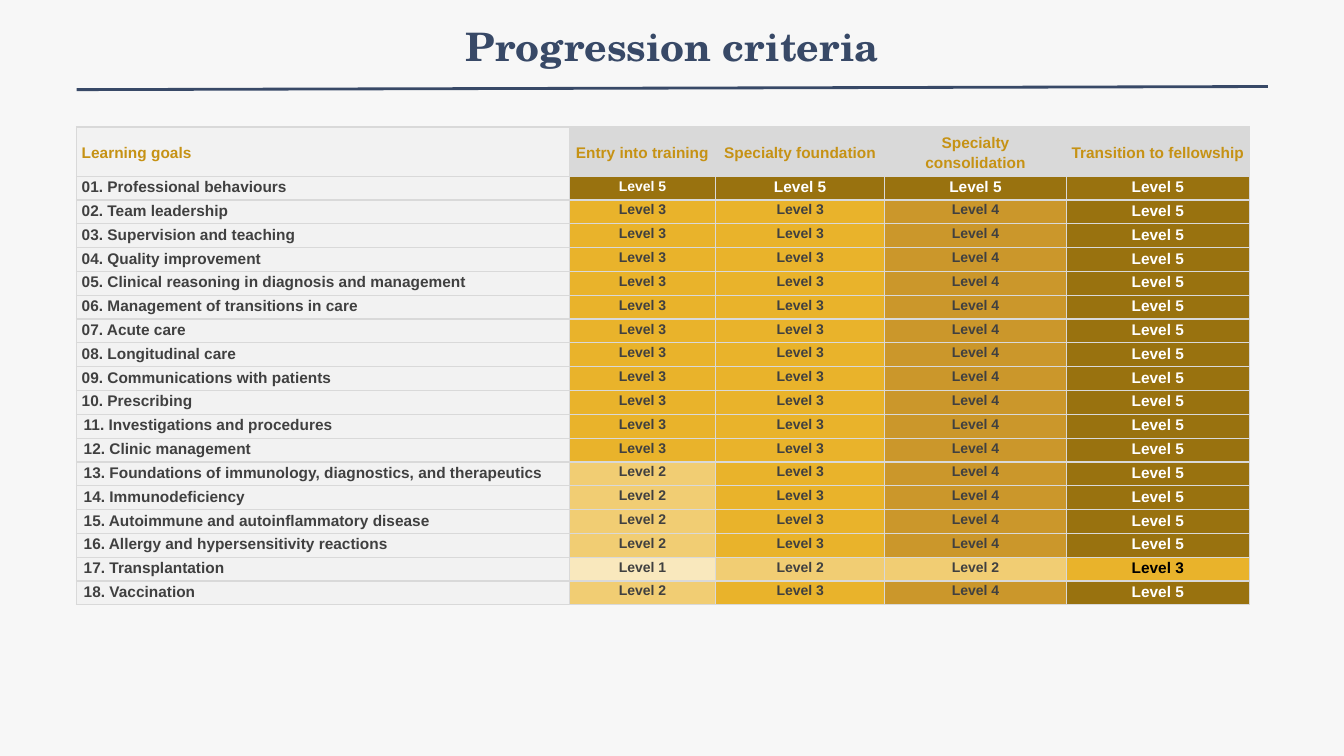
"""Build the progression criteria slide: learning goals against training phases."""
import pptx
import pptx.dml.color
import pptx.enum.shapes
import pptx.enum.text
import pptx.oxml
import pptx.oxml.ns
import pptx.util
from pptx.util import Cm

COLOURS = {
    "background": "F7F7F7",
    "navy": "384967",
    "gold": "C69214",
    "goal": "F2F2F2",
    "phase": "D9D9D9",
    "border": "D9D9D9",
    "dark": "404040",
    "black": "000000",
    "white": "FFFFFF",
    "1": "F9E8BD",
    "2": "F1CD73",
    "3": "E9B32B",
    "4": "CB972B",
    "5": "99720F",
}
PHASES = ["Learning goals", "Entry into training", "Specialty foundation",
          "Specialty consolidation", "Transition to fellowship"]
GOALS = [
    ("Professional behaviours", "5555"),
    ("Team leadership", "3345"),
    ("Supervision and teaching", "3345"),
    ("Quality improvement", "3345"),
    ("Clinical reasoning in diagnosis and management", "3345"),
    ("Management of transitions in care", "3345"),
    ("Acute care", "3345"),
    ("Longitudinal care", "3345"),
    ("Communications with patients", "3345"),
    ("Prescribing", "3345"),
    ("Investigations and procedures", "3345"),
    ("Clinic management", "3345"),
    ("Foundations of immunology, diagnostics, and therapeutics", "2345"),
    ("Immunodeficiency", "2345"),
    ("Autoimmune and autoinflammatory disease", "2345"),
    ("Allergy and hypersensitivity reactions", "2345"),
    ("Transplantation", "1223"),
    ("Vaccination", "2345"),
]
COLUMN_WIDTHS = [12.42, 3.68, 4.27, 4.57, 4.62]
HEADER_HEIGHT, GOAL_HEIGHT = 1.24, 0.6


def add_run(paragraph, text, font_name, size, colour):
    run = paragraph.add_run()
    run.text = text
    run.font.name = font_name
    run.font.size = pptx.util.Pt(size)
    run.font.bold = True
    run.font.color.rgb = pptx.dml.color.RGBColor.from_string(COLOURS[colour])


def fill_cell(cell, text, size, colour, fill, centred, margin=0.13):
    cell.margin_left = cell.margin_right = Cm(margin)
    cell.margin_top = cell.margin_bottom = 0
    properties = cell._tc.get_or_add_tcPr()
    for side in ("lnL", "lnR", "lnT", "lnB"):
        properties.append(pptx.oxml.parse_xml(
            f'<a:{side} {pptx.oxml.ns.nsdecls("a")} w="12700"><a:solidFill>'
            f'<a:srgbClr val="{COLOURS["border"]}"/></a:solidFill></a:{side}>'))
    cell.fill.solid()
    cell.fill.fore_color.rgb = pptx.dml.color.RGBColor.from_string(COLOURS[fill])
    paragraph = cell.text_frame.paragraphs[0]
    paragraph.line_spacing = 1.15
    if centred:
        paragraph.alignment = pptx.enum.text.PP_ALIGN.CENTER
    add_run(paragraph, text, "Arial", size, colour)


presentation = pptx.Presentation()
presentation.slide_width = Cm(33.87)
presentation.slide_height = Cm(19.05)
slide = presentation.slides.add_slide(presentation.slide_layouts[5])
slide.background.fill.solid()
slide.background.fill.fore_color.rgb = pptx.dml.color.RGBColor.from_string(COLOURS["background"])

heading = slide.shapes.title
heading.left, heading.top, heading.width, heading.height = Cm(5.51), Cm(0.43), Cm(22.86), Cm(3.18)
heading.text_frame.auto_size = pptx.enum.text.MSO_AUTO_SIZE.NONE
heading.text_frame.vertical_anchor = pptx.enum.text.MSO_ANCHOR.TOP
heading.text_frame.paragraphs[0].alignment = pptx.enum.text.PP_ALIGN.CENTER
add_run(heading.text_frame.paragraphs[0], "Progression criteria", "TeX Gyre Schola", 28, "navy")

heading_rule = slide.shapes.add_connector(
    pptx.enum.shapes.MSO_CONNECTOR.STRAIGHT, Cm(1.93), Cm(2.26), Cm(31.95), Cm(2.18))
heading_rule.line.color.rgb = pptx.dml.color.RGBColor.from_string(COLOURS["navy"])
heading_rule.line.width = pptx.util.Pt(2)
heading_rule._element.spPr.append(
    pptx.oxml.parse_xml(f'<a:effectLst {pptx.oxml.ns.nsdecls("a")}/>'))

criteria = slide.shapes.add_table(
    len(GOALS) + 1, len(PHASES), Cm(1.93), Cm(3.2), Cm(sum(COLUMN_WIDTHS)),
    Cm(HEADER_HEIGHT + GOAL_HEIGHT * len(GOALS))).table
criteria.first_row = False
criteria.horz_banding = False
for column, width in zip(criteria.columns, COLUMN_WIDTHS):
    column.width = Cm(width)
for index, row in enumerate(criteria.rows):
    row.height = Cm(GOAL_HEIGHT if index else HEADER_HEIGHT)

for position, phase in enumerate(PHASES):
    header = criteria.cell(0, position)
    header.vertical_anchor = pptx.enum.text.MSO_ANCHOR.MIDDLE
    fill_cell(header, phase, 11, "gold", "phase" if position else "goal", position > 0)

for number, (goal, levels) in enumerate(GOALS, start=1):
    fill_cell(criteria.cell(number, 0), f"{number:02d}. {goal}", 11, "dark", "goal", False,
              0.18 if number > 10 else 0.13)
    for position, level in enumerate(levels, start=1):
        final_phase = position == len(levels)
        large = final_phase or (level == "5" and position > 1)
        colour = "white" if level == "5" else "black" if final_phase else "dark"
        fill_cell(criteria.cell(number, position), f"Level {level}",
                  11 if large else 10, colour, level, True)

presentation.save("out.pptx")
